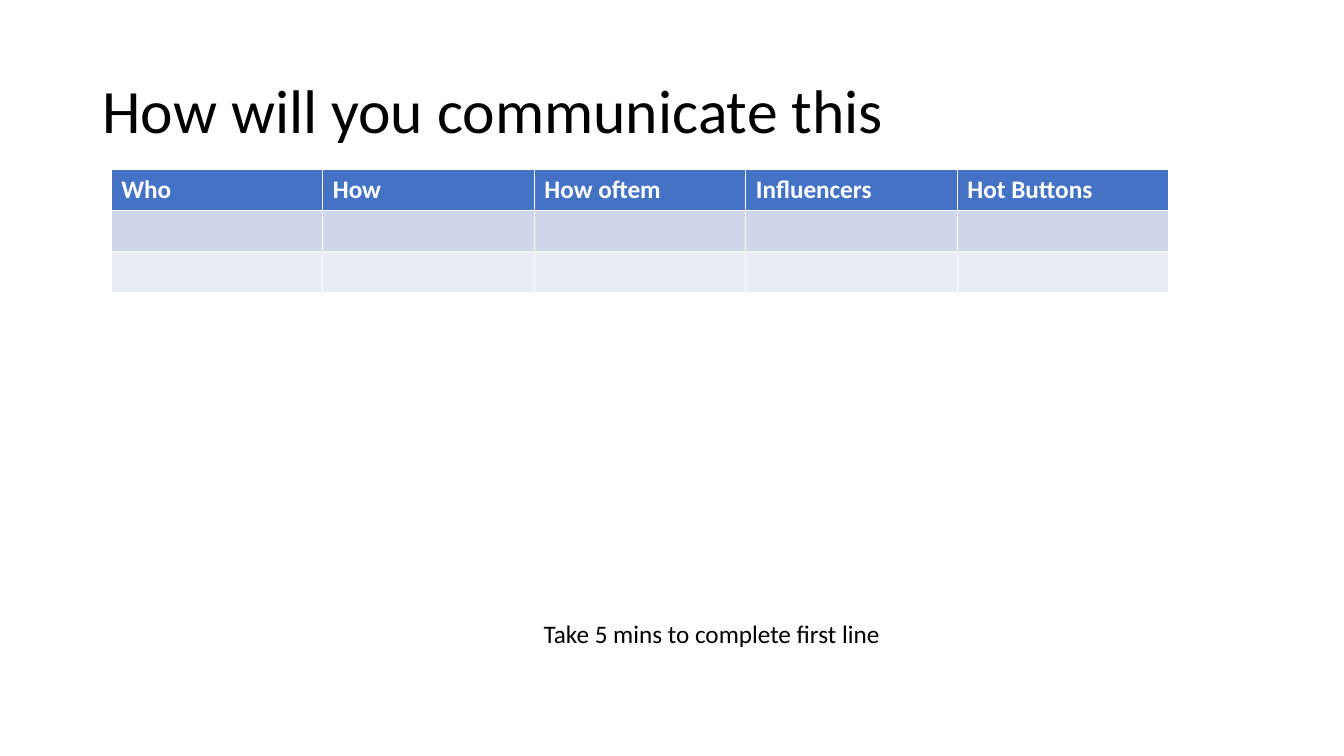
import dataclasses

import pptx
import pptx.dml.color
import pptx.enum.text
import pptx.util

ALIGN = pptx.enum.text.PP_ALIGN
ANCHOR = pptx.enum.text.MSO_ANCHOR
AUTO_SIZE = pptx.enum.text.MSO_AUTO_SIZE


@dataclasses.dataclass(frozen=True)
class Theme:
    """Font, type sizes in points and colours of the slide."""
    font: str = "Calibri"
    title_size: int = 44
    body_size: int = 18
    ink: str = "000000"
    header_ink: str = "FFFFFF"
    header_fill: str = "4472C4"
    band_fills: tuple = ("CFD5EA", "E9EBF5")


def apply(target, values):
    """Set every named attribute on the target."""
    for name, value in values.items():
        setattr(target, name, value)


class Deck:
    """Draws elements on one slide; places are percentages of its size."""

    def __init__(self, theme):
        """Open a presentation with one title-only slide."""
        self.theme = theme
        self.presentation = pptx.Presentation()
        apply(self.presentation, {"slide_width": pptx.util.Inches(13.33),
                                  "slide_height": pptx.util.Inches(7.5)})
        layout = self.presentation.slide_layouts[5]
        self.slide = self.presentation.slides.add_slide(layout)

    def place(self, left, top, width, height):
        """Turn percentages of the slide into lengths."""
        across = self.presentation.slide_width / 100
        down = self.presentation.slide_height / 100
        return [int(left * across), int(top * down),
                int(width * across), int(height * down)]

    def letter(self, frame, words, size, color, bold=False, **paragraph_format):
        """Fill a text frame with one formatted paragraph."""
        paragraph = frame.paragraphs[0]
        apply(paragraph, paragraph_format)
        run = paragraph.add_run()
        run.text = words
        apply(run.font, {"name": self.theme.font, "bold": bold,
                         "size": pptx.util.Pt(size)})
        run.font.color.rgb = pptx.dml.color.RGBColor.from_string(color)

    def title(self, words, *area):
        """Move and fill the title placeholder."""
        heading = self.slide.shapes.title
        apply(heading, dict(zip(("left", "top", "width", "height"),
                                self.place(*area))))
        apply(heading.text_frame, {"vertical_anchor": ANCHOR.MIDDLE,
                                   "word_wrap": True,
                                   "auto_size": AUTO_SIZE.NONE})
        self.letter(heading.text_frame, words, self.theme.title_size,
                    self.theme.ink, alignment=ALIGN.LEFT, line_spacing=0.9)

    def table(self, headings, *area):
        """Add a table with a header and one empty row per band colour."""
        fills = (self.theme.header_fill, *self.theme.band_fills)
        plan = self.slide.shapes.add_table(
            len(fills), len(headings), *self.place(*area)).table
        for row, fill in zip(plan.rows, fills):
            for cell in row.cells:
                cell.fill.solid()
                cell.fill.fore_color.rgb = (
                    pptx.dml.color.RGBColor.from_string(fill))
        for cell, heading in zip(plan.rows[0].cells, headings):
            self.letter(cell.text_frame, heading, self.theme.body_size,
                        self.theme.header_ink, bold=True)

    def note(self, words, *area):
        """Add a centred line of text."""
        frame = self.slide.shapes.add_textbox(*self.place(*area)).text_frame
        apply(frame, {"word_wrap": True,
                      "auto_size": AUTO_SIZE.SHAPE_TO_FIT_TEXT})
        self.letter(frame, words, self.theme.body_size, self.theme.ink,
                    alignment=ALIGN.CENTER)


def main():
    """Build the slide and save it."""
    deck = Deck(Theme())
    deck.title("How will you communicate this", 6.88, 5.33, 86.25, 19.33)
    deck.table(["Who", "How", "How oftem", "Influencers", "Hot Buttons"],
               8.28, 22.4, 78.7, 16.27)
    deck.note("Take 5 mins to complete first line", 25.5, 81.07, 54.9, 5.33)
    deck.presentation.save("out.pptx")


if __name__ == "__main__":
    main()
